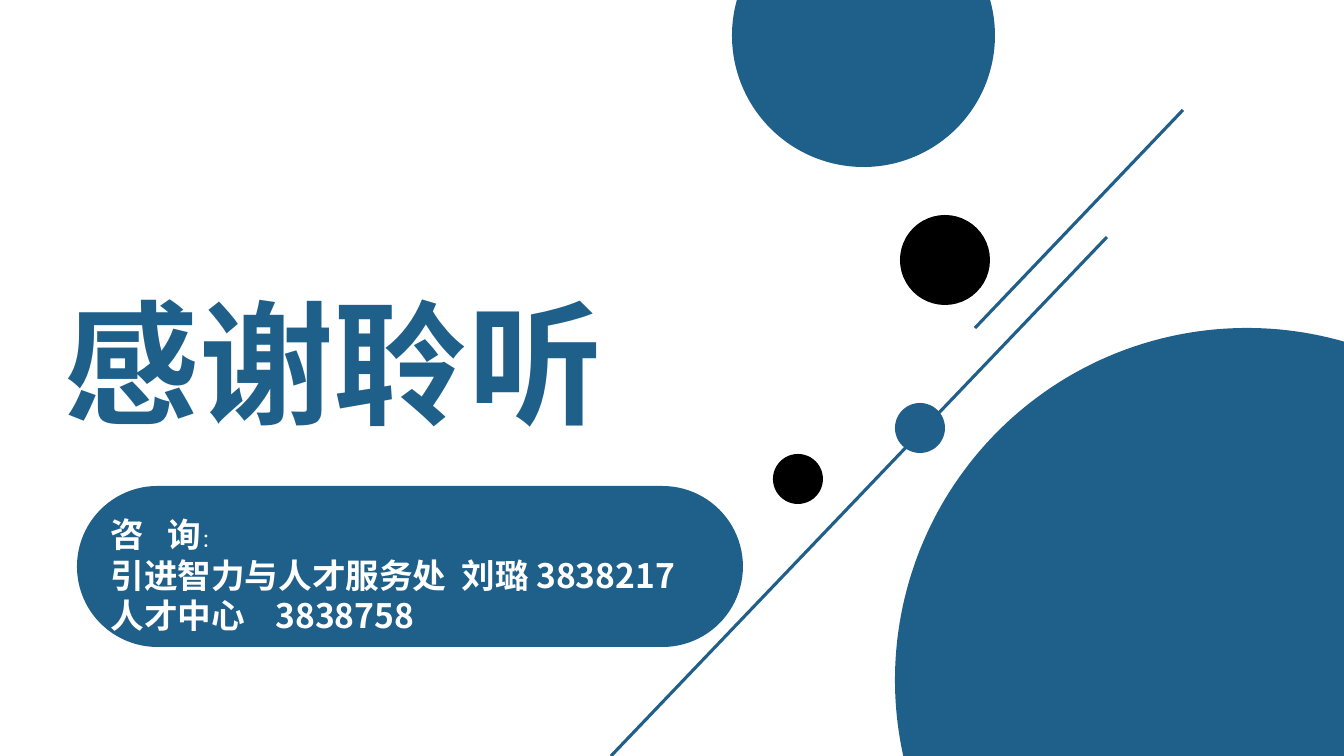
from lxml import etree
from pptx import Presentation
from pptx import util as u
from pptx.dml.color import RGBColor
from pptx.enum import shapes, text
from pptx.oxml.ns import qn

BLUE, MID_BLUE, BLACK, WHITE = "1F608B", "1F5F8A", "000000", "FFFFFF"
SANS, ARIAL = "Noto Sans CJK SC", "Arial"

# left, top, diameter, colour
BACK_CIRCLES = [
    (895, 328, 704, BLUE),
    (895, 403, 50, MID_BLUE),
    (773, 454, 50, BLACK),
    (732, -96, 263, BLUE),
    (900, 215, 90, BLACK),
]
# from x, from y, to x, to y
DIAGONALS = [(611, 756, 1107, 237), (975, 328, 1183, 110)]

TITLE = "感谢聆听"
TITLE_BOX = (55, 264, 737, 173)
CONTACT_BOX = (77, 486, 666, 161)
# runs as (text, points, font, bold), then the tab stop of the line
CONTACTS = [
    ([("咨\t询", 24, SANS, True), ("：", 14, ARIAL, False)], 57),
    ([("引进智力与人才服务处\t刘璐 3838217", 24, SANS, True)], 351),
    ([("人才中心\t3838758", 24, SANS, True)], 165),
]


def px(n):
    return u.Emu(round(n * 914400 / 100.8))


def colour(value):
    return RGBColor.from_string(value)


def add_filled(slide, kind, box, fill):
    sp = slide.shapes.add_shape(kind, *map(px, box))
    sp.shadow.inherit = False
    sp.fill.solid()
    sp.fill.fore_color.rgb = colour(fill)
    sp.line.fill.background()
    return sp


def add_diagonal(slide, ends):
    line = slide.shapes.add_connector(shapes.MSO_CONNECTOR.STRAIGHT, *map(px, ends))
    line.line.color.rgb = colour(MID_BLUE)
    line.line.width = u.Pt(2.25)
    etree.SubElement(line._element.spPr, qn("a:effectLst"))


def add_run(p, words, size, font, bold, fill):
    r = p.add_run()
    r.text = words
    r.font.size, r.font.name, r.font.bold = u.Pt(size), font, bold
    r.font.color.rgb = colour(fill)
    etree.SubElement(r._r.get_or_add_rPr(), qn("a:ea"), typeface=font)


def prepare_frame(sp, top):
    tf = sp.text_frame
    tf.word_wrap = True
    tf.vertical_anchor = text.MSO_ANCHOR.TOP
    tf.margin_top, tf.margin_bottom = px(top), 0
    return tf


def add_tab_stop(p, position):
    stops = etree.SubElement(p._p.get_or_add_pPr(), qn("a:tabLst"))
    etree.SubElement(stops, qn("a:tab"), pos=str(px(position)), algn="l")


def add_title(slide):
    tf = prepare_frame(slide.shapes.add_textbox(*map(px, TITLE_BOX)), 15)
    p = tf.paragraphs[0]
    p.line_spacing = u.Pt(116)
    add_run(p, TITLE, 96, SANS, True, BLUE)


def add_contacts(slide):
    sp = add_filled(slide, shapes.MSO_SHAPE.ROUNDED_RECTANGLE, CONTACT_BOX, BLUE)
    sp.adjustments[0] = 0.5
    tf = prepare_frame(sp, 4)
    for i, (runs, stop) in enumerate(CONTACTS):
        p = tf.add_paragraph() if i else tf.paragraphs[0]
        p.alignment = text.PP_ALIGN.LEFT
        p.line_spacing = u.Pt(29)
        add_tab_stop(p, stop)
        for run in runs:
            add_run(p, *run, WHITE)


def main():
    prs = Presentation()
    prs.slide_width, prs.slide_height = px(1344), px(756)
    slide = prs.slides.add_slide(prs.slide_layouts[6])
    for left, top, size, fill in BACK_CIRCLES:
        add_filled(slide, shapes.MSO_SHAPE.OVAL, (left, top, size, size), fill)
    for ends in DIAGONALS:
        add_diagonal(slide, ends)
    add_title(slide)
    add_contacts(slide)
    prs.save("out.pptx")


if __name__ == "__main__":
    main()
